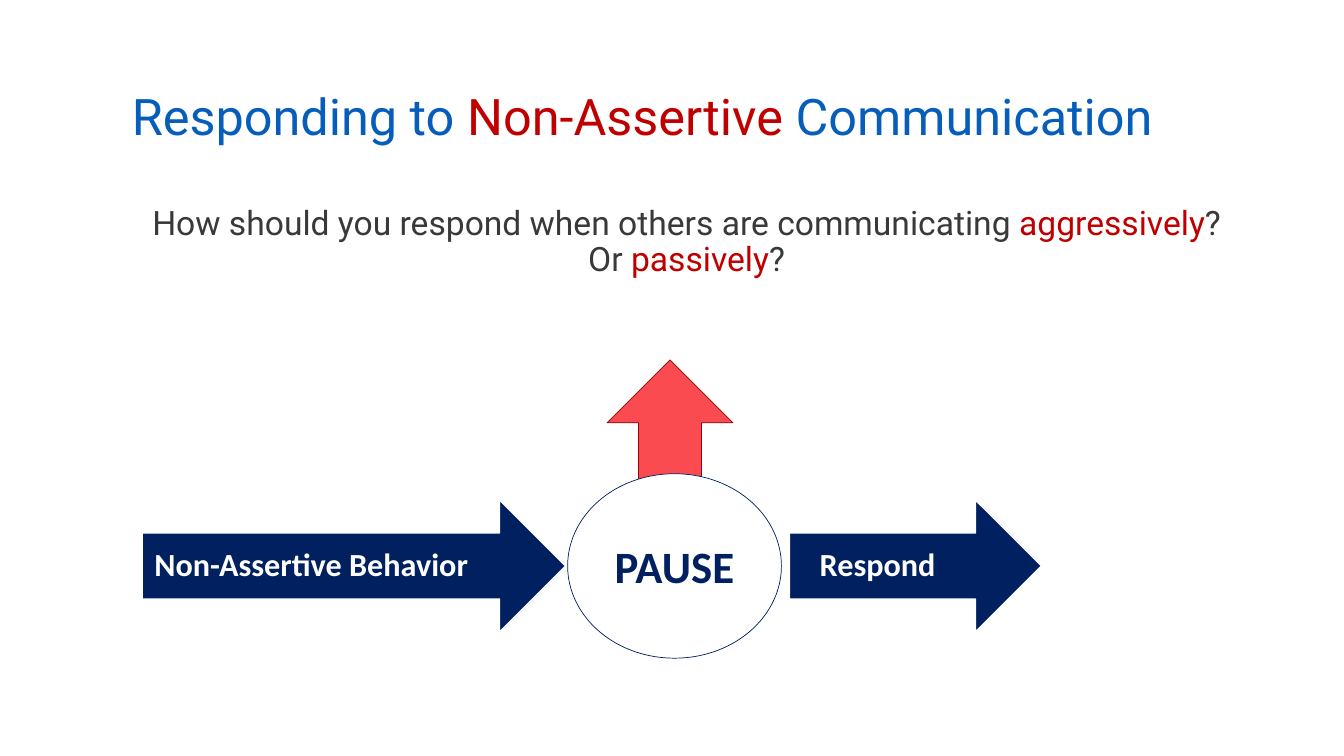
from pptx import Presentation
from pptx.dml.color import RGBColor
from pptx.enum.shapes import MSO_SHAPE
from pptx.enum.text import MSO_ANCHOR, PP_ALIGN
from pptx.util import Inches, Pt

NAVY, WHITE, CRIMSON = "002060", "FFFFFF", "C00000"


def rgb(value):
    return RGBColor.from_string(value)


def add_text(slide, box, runs, size, align, anchor):
    tf = slide.shapes.add_textbox(*map(Inches, box)).text_frame
    tf.word_wrap = True
    tf.vertical_anchor = anchor
    p = tf.paragraphs[0]
    p.alignment = align
    p.line_spacing = 0.9
    p.font.name = "Roboto"
    p.font.size = Pt(size)
    for text, color in runs:
        r = p.add_run()
        r.text = text
        r.font.color.rgb = rgb(color)


def add_block(slide, preset, box, fill, line, width):
    sp = slide.shapes.add_shape(preset, *map(Inches, box))
    sp.shadow.inherit = False
    sp.fill.solid()
    sp.fill.fore_color.rgb = rgb(fill)
    sp.line.color.rgb = rgb(line)
    sp.line.width = Pt(width)
    return sp


def add_label(sp, text, size, color, align=PP_ALIGN.CENTER):
    tf = sp.text_frame
    tf.word_wrap = True
    tf.vertical_anchor = MSO_ANCHOR.MIDDLE
    p = tf.paragraphs[0]
    p.text = text
    p.alignment = align
    p.font.name = "Calibri"
    p.font.size = Pt(size)
    p.font.bold = True
    p.font.color.rgb = rgb(color)


def add_step(slide, box, text, inset, align):
    sp = add_block(slide, MSO_SHAPE.RIGHT_ARROW, box, NAVY, WHITE, 1)
    add_label(sp, text, 23, WHITE, align)
    tf = sp.text_frame
    tf.margin_left, tf.margin_right = Inches(inset), Inches(0.61)
    tf.margin_top = tf.margin_bottom = 0
    tf.paragraphs[0].line_spacing = 0.9


def add_diagram(slide, left, top):
    add_block(slide, MSO_SHAPE.UP_ARROW, (left + 4.61, top, 1.25, 1.38),
              "FA4B51", "940409", 0.5)
    step_top, step_height = top + 1.39, 1.31
    add_step(slide, (left + 6.42, step_top, 2.5, step_height),
             "Respond", 0.3, PP_ALIGN.LEFT)
    add_step(slide, (left, step_top, 4.2, step_height),
             "Non-Assertive Behavior", 0.1, PP_ALIGN.CENTER)
    pause = add_block(slide, MSO_SHAPE.OVAL, (left + 4.22, top + 1.13, 2.12, 1.83),
                      WHITE, NAVY, 0.5)
    add_label(pause, "PAUSE", 32, NAVY)


def build_slide(prs):
    slide = prs.slides.add_slide(prs.slide_layouts[6])
    blue, gray = "065DBA", "3B3838"
    left, width = 1.21, 11.2
    add_text(slide, (left, 0.52, width, 1.33), [
        ("Responding to ", blue),
        ("Non-Assertive", CRIMSON),
        (" Communication", blue),
    ], 36, PP_ALIGN.LEFT, MSO_ANCHOR.MIDDLE)
    add_text(slide, (left, 2, width, 4.76), [
        ("How should you respond when others are communicating ", gray),
        ("aggressively", CRIMSON),
        ("? Or ", gray),
        ("passively", CRIMSON),
        ("?", gray),
    ], 24, PP_ALIGN.CENTER, MSO_ANCHOR.TOP)
    add_diagram(slide, 1.41, 3.57)


def main():
    prs = Presentation()
    prs.slide_width, prs.slide_height = Inches(13.33), Inches(7.5)
    build_slide(prs)
    prs.save("out.pptx")


if __name__ == "__main__":
    main()
